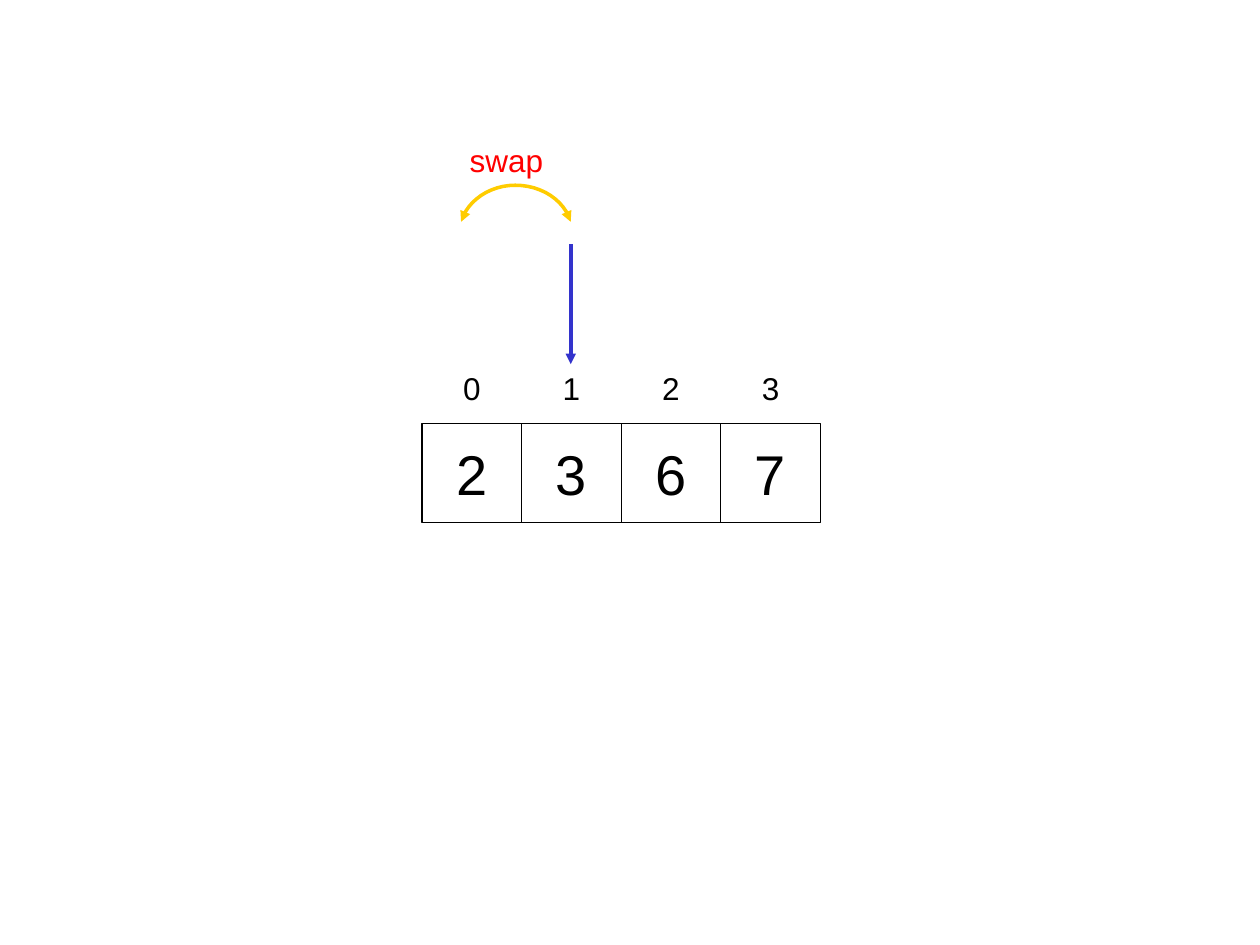
from pptx import Presentation
from pptx.dml.color import RGBColor
from pptx.enum.shapes import MSO_CONNECTOR as Link, MSO_SHAPE as Kind
from pptx.enum.text import MSO_ANCHOR as Anchor, PP_ALIGN as Align
from pptx.oxml.ns import qn
from pptx.util import Inches, Pt
from lxml.etree import SubElement

BLACK = RGBColor(0, 0, 0)
RED = RGBColor(0xFF, 0, 0)
GOLD = RGBColor(0xFF, 0xCC, 0)
BLUE = RGBColor(0x33, 0x33, 0xCC)

LEFT, TOP, SIDE = 3.35, 3.36, 0.79
STEPS = 12


def write(shape, text, size, color):
    """Put one centred line of text in a shape."""
    para = shape.text_frame.paragraphs[0]
    para.alignment = Align.CENTER
    run = para.add_run()
    run.text = text
    run.font.color.rgb = color
    for name, value in {"name": "Arial", "size": Pt(size)}.items():
        setattr(run.font, name, value)


def add_cell(slide, x, text):
    cell = slide.shapes.add_shape(
        Kind.RECTANGLE, Inches(x), Inches(TOP), Inches(SIDE), Inches(SIDE))
    cell.shadow.inherit = False
    cell.fill.background()
    cell.line.color.rgb = BLACK
    cell.line.width = Pt(0.75)
    form = {"word_wrap": False, "vertical_anchor": Anchor.MIDDLE}
    for name, value in form.items():
        setattr(cell.text_frame, name, value)
    write(cell, text, 32, BLACK)


def add_label(slide, x, y, wide, high, text, color):
    box = slide.shapes.add_textbox(
        Inches(x), Inches(y), Inches(wide), Inches(high))
    box.text_frame.word_wrap = True
    write(box, text, 18, color)


def style_line(shape, color, *ends):
    """Colour a line and put arrowheads on the named ends."""
    shape.line.color.rgb = color
    shape.line.width = Pt(2)
    edge = shape.line._get_or_add_ln()
    for end in ends:
        SubElement(edge, qn(f"a:{end}"), type="triangle")


def bend(points):
    """Sample a cubic curve given by its four control points."""
    for step in range(1, STEPS + 1):
        t = step / STEPS
        parts = ((1 - t) ** 3, 3 * t * (1 - t) ** 2, 3 * t * t * (1 - t), t ** 3)
        yield tuple(
            Inches(sum(p * pt[axis] for p, pt in zip(parts, points)))
            for axis in (0, 1))


def add_arc(slide):
    start, peak, end = (3.66, 1.76), (4.09, 1.47), (4.53, 1.76)
    rise = [start, (3.71, 1.59), (3.89, 1.47), peak]
    fall = [peak, (4.3, 1.47), (4.48, 1.59), end]
    path = slide.shapes.build_freeform(Inches(start[0]), Inches(start[1]))
    path.add_line_segments([*bend(rise), *bend(fall)], close=False)
    arc = path.convert_to_shape()
    arc.shadow.inherit = False
    arc.fill.background()
    style_line(arc, GOLD, "headEnd", "tailEnd")


def add_arrow(slide, x, top, foot):
    arrow = slide.shapes.add_connector(
        Link.STRAIGHT, Inches(x), Inches(top), Inches(x), Inches(foot))
    style_line(arrow, BLUE, "tailEnd")
    SubElement(arrow._element.spPr, qn("a:effectLst"))


def main():
    deck = Presentation()
    deck.slide_width, deck.slide_height = Inches(10), Inches(7.5)
    slide = deck.slides.add_slide(deck.slide_layouts[6])

    # Array cells with their indexes above
    for index, value in enumerate("2367"):
        x = LEFT + index * SIDE
        add_cell(slide, x, value)
        add_label(slide, x, 2.88, SIDE, 0.39, str(index), BLACK)

    # Swap mark
    add_arc(slide)
    add_label(slide, LEFT, 1.07, 1.34, 0.4, "swap", RED)

    # Pointer to the current index
    add_arrow(slide, 4.53, 1.94, 2.89)

    deck.save("out.pptx")


if __name__ == "__main__":
    main()
